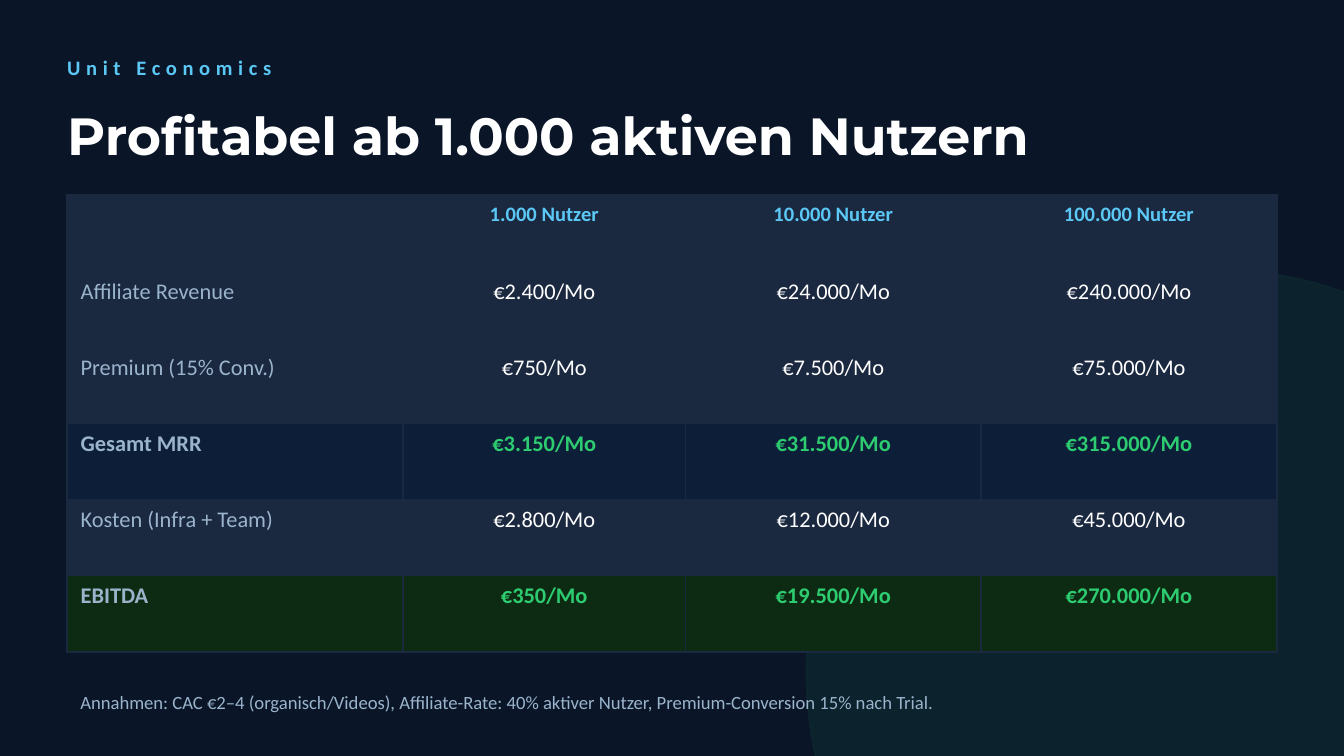
from lxml import etree
from pptx import Presentation
from pptx.dml.color import RGBColor
from pptx.enum.shapes import MSO_SHAPE
from pptx.enum.text import MSO_ANCHOR, MSO_AUTO_SIZE, PP_ALIGN
from pptx.oxml.ns import qn
from pptx.util import Inches, Pt

OVAL = MSO_SHAPE.OVAL
MIDDLE = MSO_ANCHOR.MIDDLE
NO_AUTOFIT = MSO_AUTO_SIZE.NONE
LEFT, CENTER = PP_ALIGN.LEFT, PP_ALIGN.CENTER
TITLE_ONLY = 5

COLORS = {
    "background": "0A1628",
    "panel": "1A2840",
    "total": "0D1F38",
    "profit": "0D2B12",
    "accent": "5BC8F5",
    "green": "2ECC71",
    "muted": "9AB4CC",
    "white": "FFFFFF",
}

COLUMN_WIDTHS = [2.5, 2.1, 2.2, 2.2]
HEADER = ["", "1.000 Nutzer", "10.000 Nutzer", "100.000 Nutzer"]
ROWS = [
    ("panel", ["Affiliate Revenue", "€2.400/Mo", "€24.000/Mo", "€240.000/Mo"]),
    ("panel", ["Premium (15% Conv.)", "€750/Mo", "€7.500/Mo", "€75.000/Mo"]),
    ("total", ["Gesamt MRR", "€3.150/Mo", "€31.500/Mo", "€315.000/Mo"]),
    ("panel", ["Kosten (Infra + Team)", "€2.800/Mo", "€12.000/Mo", "€45.000/Mo"]),
    ("profit", ["EBITDA", "€350/Mo", "€19.500/Mo", "€270.000/Mo"]),
]


def color(name):
    return RGBColor.from_string(COLORS[name])


def style_paragraph(paragraph, size, color_name, bold=False, font="Calibri", alignment=LEFT):
    paragraph.alignment = alignment
    for run in paragraph.runs:
        run.font.name = font
        run.font.size = Pt(size)
        run.font.bold = bold
        run.font.color.rgb = color(color_name)


def set_opacity(fill_parent, percent):
    for color_element in fill_parent.iter(qn("a:srgbClr")):
        etree.SubElement(color_element, qn("a:alpha"), val=str(percent * 1000))


def fill_text(shape, text, margin=None):
    frame = shape.text_frame
    frame.text = text
    frame.word_wrap = True
    frame.auto_size = NO_AUTOFIT
    frame.vertical_anchor = MIDDLE
    if margin is not None:
        frame.margin_left = frame.margin_right = margin
        frame.margin_top = frame.margin_bottom = margin
    return frame.paragraphs[0]


def add_glow(slide, left, top, size):
    glow = slide.shapes.add_shape(OVAL, left, top, size, size)
    glow.shadow.inherit = False
    glow.fill.solid()
    glow.fill.fore_color.rgb = color("green")
    glow.line.color.rgb = color("green")
    glow.line.width = Pt(1)
    properties = glow.element.spPr
    set_opacity(properties.find(qn("a:solidFill")), 7)
    set_opacity(properties.find(qn("a:ln")), 4)
    slide.shapes.element.insert(2, glow.element)


def add_heading(slide, left, top, width):
    label = slide.shapes.add_textbox(left, top, width, Inches(0.4))
    paragraph = fill_text(label, "Unit Economics", margin=0)
    style_paragraph(paragraph, 11, "accent", bold=True)
    paragraph.runs[0].font._element.set("spc", "300")

    title = slide.shapes.title
    title.left, title.top = left, top + Inches(0.4)
    title.width, title.height = width, Inches(0.6)
    paragraph = fill_text(title, "Profitabel ab 1.000 aktiven Nutzern", margin=0)
    style_paragraph(paragraph, 28, "white", bold=True, font="Montserrat")


def add_borders(cell):
    properties = cell._tc.get_or_add_tcPr()
    for side in ("a:lnL", "a:lnR", "a:lnT", "a:lnB"):
        line = etree.SubElement(properties, qn(side), w=str(Pt(1)))
        fill = etree.SubElement(line, qn("a:solidFill"))
        etree.SubElement(fill, qn("a:srgbClr"), val=COLORS["panel"])


def fill_cell(cell, text, fill_name, **text_style):
    add_borders(cell)
    cell.fill.solid()
    cell.fill.fore_color.rgb = color(fill_name)
    cell.text = text
    style_paragraph(cell.text_frame.paragraphs[0], **text_style)


def add_economics_table(slide, left, top, width, height):
    row_count = len(ROWS) + 1
    table = slide.shapes.add_table(
        row_count, len(COLUMN_WIDTHS), left, top, width, height
    ).table
    table.first_row = False
    table.horz_banding = False
    for column, column_width in zip(table.columns, COLUMN_WIDTHS):
        column.width = Inches(column_width)
    for row in table.rows:
        row.height = height // row_count

    for index, text in enumerate(HEADER):
        fill_cell(table.cell(0, index), text, "panel",
                  size=11, color_name="accent", bold=True, alignment=CENTER)
    for row_index, (fill_name, texts) in enumerate(ROWS, start=1):
        highlighted = fill_name != "panel"
        value_color = "green" if highlighted else "white"
        for index, text in enumerate(texts):
            fill_cell(table.cell(row_index, index), text, fill_name,
                      size=12, bold=highlighted,
                      color_name=value_color if index else "muted",
                      alignment=CENTER if index else LEFT)


def add_footnote(slide, left, top, width, height):
    footnote = slide.shapes.add_textbox(left, top, width, height)
    paragraph = fill_text(
        footnote,
        "Annahmen: CAC €2–4 (organisch/Videos), Affiliate-Rate: 40% aktiver Nutzer, "
        "Premium-Conversion 15% nach Trial.",
    )
    style_paragraph(paragraph, 10, "muted")


def main():
    presentation = Presentation()
    presentation.slide_width = Inches(10)
    presentation.slide_height = presentation.slide_width * 9 // 16
    slide = presentation.slides.add_slide(presentation.slide_layouts[TITLE_ONLY])
    slide.background.fill.solid()
    slide.background.fill.fore_color.rgb = color("background")

    left, width = Inches(0.5), Inches(9)
    add_glow(slide, Inches(6), Inches(2), Inches(6))
    add_heading(slide, left, Inches(0.3), width)
    add_economics_table(slide, left, Inches(1.45), width, Inches(3.4))
    add_footnote(slide, left, Inches(5), width, Inches(0.45))
    presentation.save("out.pptx")


if __name__ == "__main__":
    main()
